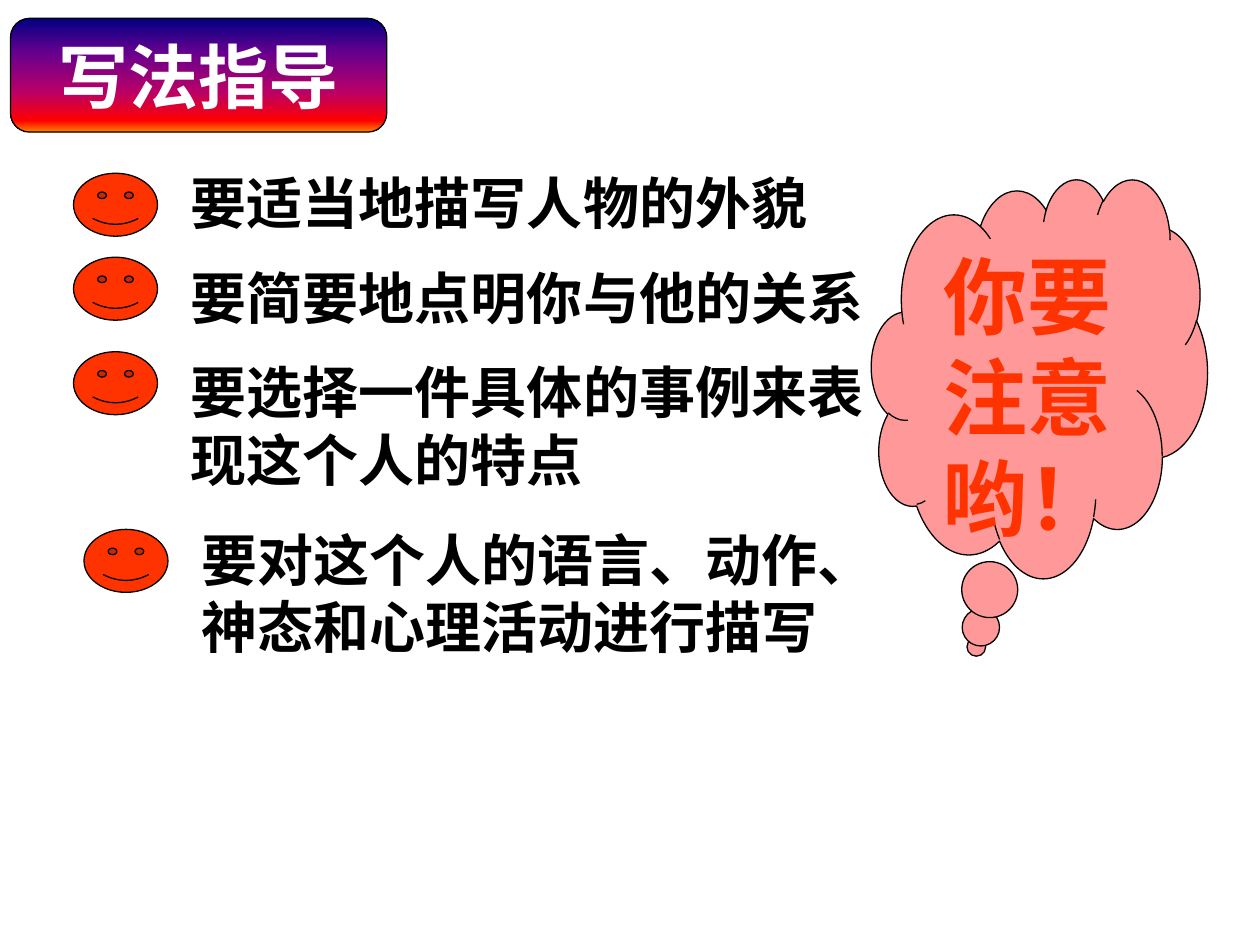
from lxml import etree
from pptx import Presentation
from pptx.dml.color import RGBColor
from pptx.enum.lang import MSO_LANGUAGE_ID
from pptx.enum.shapes import MSO_SHAPE
from pptx.enum.text import MSO_ANCHOR, MSO_AUTO_SIZE, PP_ALIGN
from pptx.oxml.ns import qn
from pptx.util import Pt

CENTER = PP_ALIGN.CENTER
TOP = MSO_ANCHOR.TOP
MIDDLE = MSO_ANCHOR.MIDDLE
NO_AUTOFIT = MSO_AUTO_SIZE.NONE
CHINESE = MSO_LANGUAGE_ID.SIMPLIFIED_CHINESE
CLOUD = MSO_SHAPE.CLOUD_CALLOUT
SMILEY = MSO_SHAPE.SMILEY_FACE
ROUNDED = MSO_SHAPE.ROUNDED_RECTANGLE

BANNER_STOPS = [(0, "000082"), (30, "66008F"), (65, "BA0066"), (90, "FF0000"), (100, "FF8200")]
SMILEY_WIDTH, SMILEY_HEIGHT = 48, 36
LINE_HEIGHT = 38.5

# left, top, smiley drop, lines of text
TIPS = [
    (42, 93, 6, ["要适当地描写人物的外貌"]),
    (42, 147, 0, ["要简要地点明你与他的关系"]),
    (42, 201, 0, ["要选择一件具体的事例来表", "现这个人的特点"]),
    (48, 296.5, 6, ["要对这个人的语言、动作、", "神态和心理活动进行描写"]),
]


def color(hex_code):
    return RGBColor.from_string(hex_code)


def add_outlined(page, kind, box, fill, adjustments):
    shape = page.shapes.add_shape(kind, *map(Pt, box))
    shape.shadow.inherit = False
    for index, value in enumerate(adjustments):
        shape.adjustments[index] = value
    if fill:
        shape.fill.solid()
        shape.fill.fore_color.rgb = color(fill)
    shape.line.color.rgb = color("000000")
    shape.line.width = Pt(0.75)
    return shape


def write(frame, lines, size, hex_code, align=None, anchor=TOP):
    frame.text = "\n".join(lines)
    frame.vertical_anchor = anchor
    frame.auto_size = NO_AUTOFIT
    for para in frame.paragraphs:
        para.alignment = align
        for span in para.runs:
            span.font.name = "Arial"
            span.font.size = Pt(size)
            span.font.bold = True
            span.font.color.rgb = color(hex_code)
            span.font.language_id = CHINESE


def add_banner(page, box):
    banner = add_outlined(page, ROUNDED, box, None, [0.167])
    banner.fill.gradient()
    banner.fill.gradient_angle = 270
    # Replace the two default stops with the full colour ramp
    stops = banner._element.spPr.find(qn("a:gradFill")).find(qn("a:gsLst"))
    for stop in list(stops):
        stops.remove(stop)
    for percent, hex_code in BANNER_STOPS:
        stop = etree.SubElement(stops, qn("a:gs"), pos=str(percent * 1000))
        etree.SubElement(stop, qn("a:srgbClr"), val=hex_code)

    # The title lies on top of the banner
    title = page.shapes.title
    title.left, title.top, title.width, title.height = map(Pt, box)
    page.shapes._spTree.append(title._element)
    write(title.text_frame, ["写法指导"], 40, "FFFFFF", CENTER, MIDDLE)


def add_tip(page, left, top, smiley_drop, lines):
    smiley_box = (left, top + smiley_drop, SMILEY_WIDTH, SMILEY_HEIGHT)
    add_outlined(page, SMILEY, smiley_box, "FF3300", [0.047])
    text_box = (left + 60, top, 400, LINE_HEIGHT * len(lines) + 7)
    frame = page.shapes.add_textbox(*map(Pt, text_box)).text_frame
    write(frame, lines, 32, "000000")
    frame.word_wrap = False


def add_reminder(page, box):
    cloud = add_outlined(page, CLOUD, box, "FF9999", [-0.188, 0.674])
    write(cloud.text_frame, ["你要注意哟！"], 48, "FF3300", CENTER)
    cloud.text_frame.word_wrap = True


def main():
    deck = Presentation()
    deck.slide_width, deck.slide_height = Pt(720), Pt(540)
    page = deck.slides.add_slide(deck.slide_layouts[5])
    add_reminder(page, (498, 102, 192, 228))
    for tip in TIPS:
        add_tip(page, *tip)
    add_banner(page, (6, 10.5, 215, 65))
    deck.save("out.pptx")


if __name__ == "__main__":
    main()
